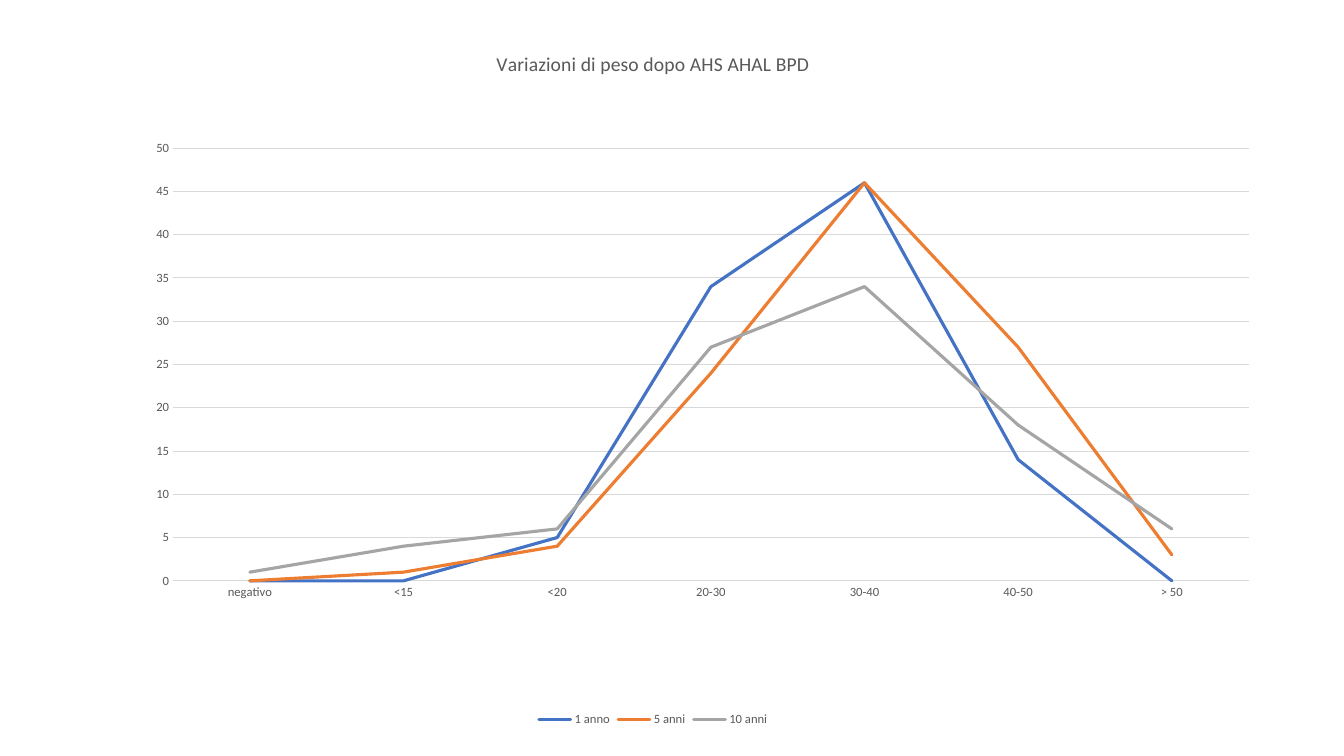
from lxml import etree
from pptx import Presentation
from pptx import util as u
from pptx.chart.data import CategoryChartData
from pptx.dml.color import RGBColor
from pptx.enum import chart as kinds
from pptx.oxml.ns import qn

TITLE = "Variazioni di peso dopo AHS AHAL BPD"
WEIGHT_LOSS = ["negativo", "<15", "<20", "20-30", "30-40", "40-50", "> 50"]
GRAY_TEXT = RGBColor(0x59, 0x59, 0x59)
GRAY_LINE = RGBColor(0xD9, 0xD9, 0xD9)
FOLLOW_UPS = [
    ("1 anno", RGBColor(0x44, 0x72, 0xC4), (0, 0, 5, 34, 46, 14, 0)),
    ("5 anni", RGBColor(0xED, 0x7D, 0x31), (0, 1, 4, 24, 46, 27, 3)),
    ("10 anni", RGBColor(0xA5, 0xA5, 0xA5), (1, 4, 6, 27, 34, 18, 6)),
]
CHART_FRAME = (0.57, 0.27, 11.82, 6.98)
PLOT_SHARES = {"x": 0.097, "y": 0.172, "w": 0.903, "h": 0.615}


def style_font(font, size):
    font.name = "Calibri"
    font.size = u.Pt(size)
    font.bold = False
    font.color.rgb = GRAY_TEXT


def style_line(line, color, width):
    line.color.rgb = color
    line.width = u.Pt(width)


def round_line(series):
    outline = series._element.find(qn("c:spPr")).find(qn("a:ln"))
    outline.set("cap", "rnd")
    etree.SubElement(outline, qn("a:round"))


def place_plot(chart):
    plot_area = chart.plots[0]._element.getparent()
    for old in plot_area.findall(qn("c:layout")):
        plot_area.remove(old)
    layout = etree.Element(qn("c:layout"))
    plot_area.insert(0, layout)
    manual = etree.SubElement(layout, qn("c:manualLayout"))
    settings = {"layoutTarget": "inner", "xMode": "edge", "yMode": "edge", **PLOT_SHARES}
    for name, value in settings.items():
        etree.SubElement(manual, qn(f"c:{name}")).set("val", str(value))


def style_axes(chart):
    for axis in (chart.category_axis, chart.value_axis):
        axis.major_tick_mark = kinds.XL_TICK_MARK.NONE
        axis.minor_tick_mark = kinds.XL_TICK_MARK.NONE
        style_font(axis.tick_labels.font, 9)
    style_line(chart.category_axis.format.line, GRAY_LINE, 0.75)
    values = chart.value_axis
    values.minimum_scale, values.maximum_scale, values.major_unit = 0, 50, 5
    values.format.line.fill.background()
    style_line(values.major_gridlines.format.line, GRAY_LINE, 0.75)


def add_weight_chart(page):
    data = CategoryChartData(number_format="General")
    data.categories = WEIGHT_LOSS
    for name, _, values in FOLLOW_UPS:
        data.add_series(name, values)
    frame = map(u.Inches, CHART_FRAME)
    chart = page.shapes.add_chart(kinds.XL_CHART_TYPE.LINE, *frame, data).chart
    chart.font.name = "Calibri"
    chart.font.size = u.Pt(10)

    chart.has_title = True
    para = chart.chart_title.text_frame.paragraphs[0]
    para.text = TITLE
    style_font(para.font, 14)
    chart.chart_title.include_in_layout = False

    chart.has_legend = True
    chart.legend.position = kinds.XL_LEGEND_POSITION.BOTTOM
    chart.legend.include_in_layout = False
    style_font(chart.legend.font, 9)

    chart.plots[0].vary_by_categories = False
    for series, (_, color, _) in zip(chart.plots[0].series, FOLLOW_UPS):
        series.smooth = False
        series.marker.style = kinds.XL_MARKER_STYLE.NONE
        style_line(series.format.line, color, 2.25)
        round_line(series)
    style_axes(chart)
    place_plot(chart)


def main():
    deck = Presentation()
    deck.slide_width, deck.slide_height = u.Inches(13.33), u.Inches(7.5)
    page = deck.slides.add_slide(deck.slide_layouts[6])
    add_weight_chart(page)
    deck.save("out.pptx")


if __name__ == "__main__":
    main()
